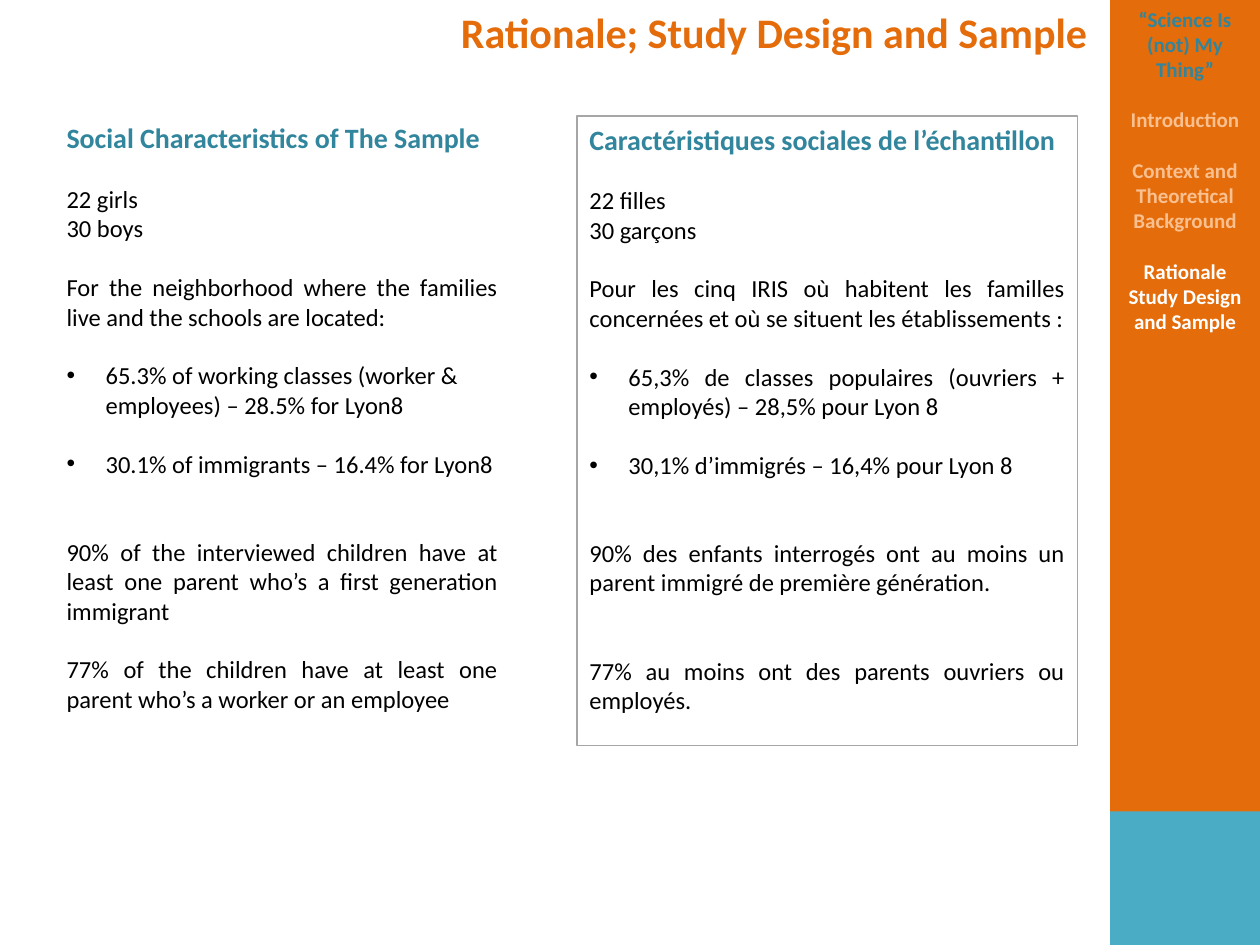
from lxml import etree
from pptx import Presentation
from pptx.dml.color import RGBColor
from pptx.enum.shapes import MSO_SHAPE
from pptx.enum.text import MSO_ANCHOR, PP_ALIGN
from pptx.oxml.ns import qn
from pptx.util import Inches, Pt

RECT = MSO_SHAPE.RECTANGLE
TOP = MSO_ANCHOR.TOP
LEFT, MID, JUST = PP_ALIGN.LEFT, PP_ALIGN.CENTER, PP_ALIGN.JUSTIFY

ORANGE = RGBColor(0xE4, 0x6C, 0x0A)
PEACH = RGBColor(0xFA, 0xC0, 0x90)
TEAL = RGBColor(0x31, 0x85, 0x9C)
AQUA = RGBColor(0x4B, 0xAC, 0xC6)
GREY = RGBColor(0xA6, 0xA6, 0xA6)
BLACK = RGBColor(0, 0, 0)
WHITE = RGBColor(255, 255, 255)

FONT = "Calibri"
LINE = 1.2  # line height as a share of the text size
INDENT = Inches(0.31)

TITLE = "Rationale; Study Design and Sample"
MENU = [
    ("“Science Is (not) My Thing”", TEAL),
    ("Introduction", PEACH),
    ("Context and Theoretical Background", PEACH),
    ("Rationale Study Design and Sample", WHITE),
]
# Each row: lines of space above, bulleted, text
ENGLISH = ("Social Characteristics of The Sample", [
    (1, False, "22 girls"),
    (0, False, "30 boys"),
    (1, False, "For the neighborhood where the families live "
               "and the schools are located:"),
    (1, True, "65.3% of working classes (worker & employees) – 28.5% for Lyon8"),
    (1, True, "30.1% of immigrants – 16.4% for Lyon8"),
    (2, False, "90% of the interviewed children have at least one parent "
               "who’s a first generation immigrant"),
    (1, False, "77% of the children have at least one parent "
               "who’s a worker or an employee"),
])
FRENCH = ("Caractéristiques sociales de l’échantillon", [
    (1, False, "22 filles"),
    (0, False, "30 garçons"),
    (1, False, "Pour les cinq IRIS où habitent les familles concernées "
               "et où se situent les établissements :"),
    (1, True, "65,3% de classes populaires (ouvriers + employés) "
              "– 28,5% pour Lyon 8"),
    (1, True, "30,1% d’immigrés – 16,4% pour Lyon 8"),
    (2, False, "90% des enfants interrogés ont au moins un parent immigré "
               "de première génération."),
    (2, False, "77% au moins ont des parents ouvriers ou employés."),
])


def add_box(shapes, area, fill=None, line=None):
    box = shapes.add_shape(RECT, *map(Inches, area))
    box.shadow.inherit = False
    if fill is None:
        box.fill.background()
    else:
        box.fill.solid()
        box.fill.fore_color.rgb = fill
    if line is None:
        box.line.fill.background()
    else:
        box.line.color.rgb = line
        box.line.width = Pt(0.75)
    return box


def add_para(frame, text, size, color, bold=False, align=JUST, gap=0):
    """Add a paragraph with gap blank lines of space above it."""
    first = frame.paragraphs[0]
    para = frame.add_paragraph() if first.runs else first
    para.alignment = align
    para.space_before = Pt(gap * size * LINE)
    run = para.add_run()
    run.text = text
    font = run.font
    font.name, font.size, font.bold = FONT, Pt(size), bold
    font.color.rgb = color
    return para


def add_bullet(para):
    props = para._p.get_or_add_pPr()
    props.set("marL", str(INDENT))
    props.set("indent", str(-INDENT))
    etree.SubElement(props, qn("a:buFont"), typeface="Arial")
    etree.SubElement(props, qn("a:buChar"), char="•")


def fill_column(box, content, align):
    """Write a heading and its rows; align sets the bulleted rows."""
    head, rows = content
    frame = box.text_frame
    frame.word_wrap = True
    frame.vertical_anchor = TOP
    add_para(frame, head, 16, TEAL, bold=True)
    for gap, dot, text in rows:
        para = add_para(frame, text, 14, BLACK, gap=gap,
                        align=align if dot else JUST)
        if dot:
            add_bullet(para)


def main():
    deck = Presentation()
    deck.slide_width, deck.slide_height = Inches(10), Inches(7.5)
    shapes = deck.slides.add_slide(deck.slide_layouts[6]).shapes

    side = shapes.add_group_shape().shapes
    menu = add_box(side, (8.81, 0, 1.19, 7.37), ORANGE).text_frame
    add_box(side, (8.81, 6.44, 1.19, 1.06), AQUA)
    menu.word_wrap = True
    menu.vertical_anchor = TOP
    for i, (text, color) in enumerate(MENU):
        add_para(menu, text, 12, color, bold=True, align=MID, gap=min(i, 1))

    title = shapes.add_textbox(*map(Inches, (3.48, 0, 5.33, 0.5))).text_frame
    title.word_wrap = False
    add_para(title, TITLE, 24, ORANGE, bold=True, align=MID)

    left = shapes.add_textbox(*map(Inches, (0.43, 0.91, 3.62, 5.08)))
    fill_column(left, ENGLISH, LEFT)
    right = add_box(shapes, (4.58, 0.92, 3.97, 5), line=GREY)
    fill_column(right, FRENCH, JUST)

    deck.save("out.pptx")


if __name__ == "__main__":
    main()
